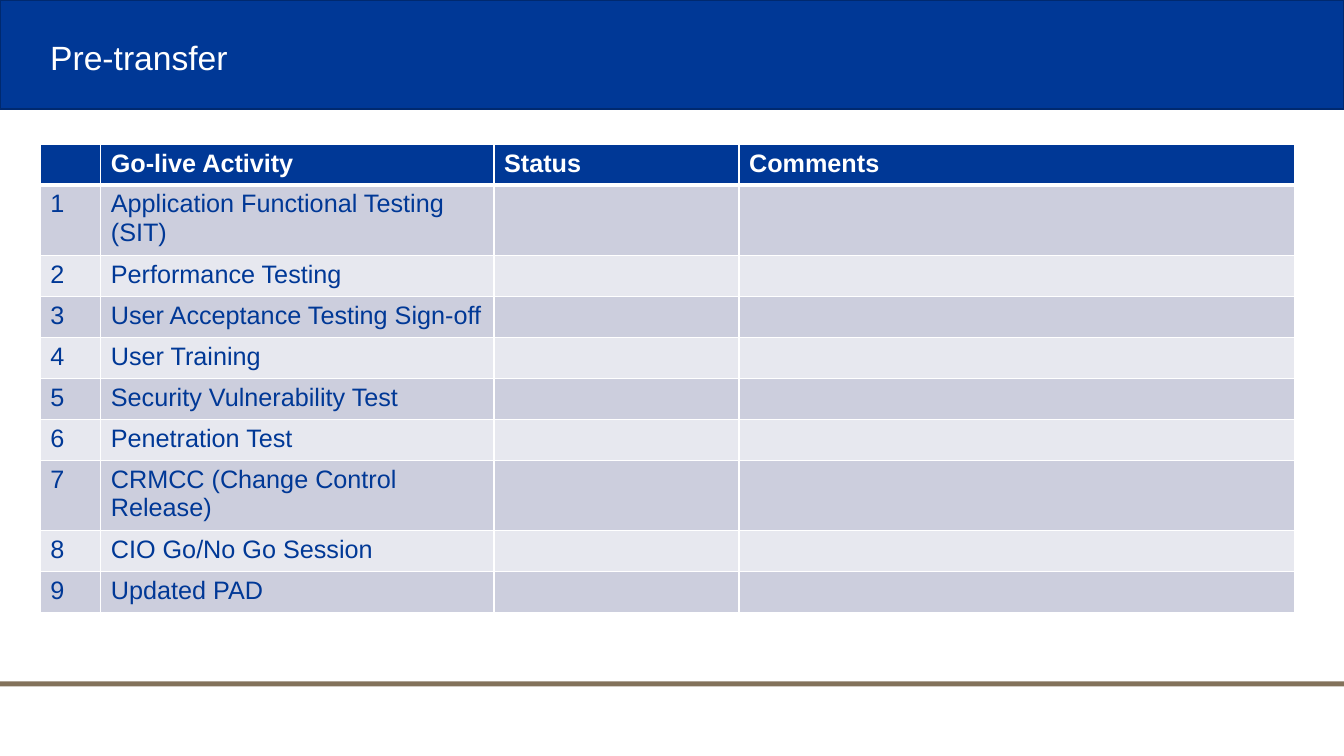
from lxml.etree import SubElement
from pptx import Presentation
from pptx.dml.color import RGBColor as RGB
from pptx.enum.shapes import MSO_SHAPE as SHAPE
from pptx.enum.text import MSO_ANCHOR as ANCHOR
from pptx.oxml.ns import qn
from pptx.util import Inches, Pt

COLORS = {
    "blue": "003896",
    "edge": "00296F",
    "brown": "83725B",
    "white": "FFFFFF",
    "odd": "CCCEDD",
    "even": "E7E8EF",
}
HEADERS = ["", "Go-live Activity", "Status", "Comments"]
ACTIVITIES = [
    "Application Functional Testing (SIT)",
    "Performance Testing",
    "User Acceptance Testing Sign-off",
    "User Training",
    "Security Vulnerability Test",
    "Penetration Test",
    "CRMCC (Change Control Release)",
    "CIO Go/No Go Session",
    "Updated PAD",
]
COL_WIDTHS = [0.6, 3.9, 2.43, 5.51]


class Deck:
    font = "Arial"

    def __init__(self, prs):
        self.slide = prs.slides.add_slide(prs.slide_layouts[6])

    def color(self, name):
        return RGB.from_string(COLORS[name])

    def add_text(self, p, text, color, size, bold=False):
        r = p.add_run()
        r.text = text
        style = {"name": self.font, "size": Pt(size), "bold": bold}
        for key, value in style.items():
            setattr(r.font, key, value)
        r.font.color.rgb = self.color(color)

    def bar(self, x, y, w, h, fill, line=None):
        sp = self.slide.shapes.add_shape(SHAPE.RECTANGLE, *map(Inches, (x, y, w, h)))
        sp.shadow.inherit = False
        sp.fill.solid()
        sp.fill.fore_color.rgb = self.color(fill)
        if line:
            sp.line.color.rgb = self.color(line)
            sp.line.width = Pt(1)
        else:
            sp.line.fill.background()

    def title(self, x, y, w, h, text):
        tf = self.slide.shapes.add_textbox(*map(Inches, (x, y, w, h))).text_frame
        for key, value in {"word_wrap": True, "vertical_anchor": ANCHOR.MIDDLE}.items():
            setattr(tf, key, value)
        p = tf.paragraphs[0]
        p.line_spacing = 0.9
        self.add_text(p, text, "white", 24)

    def border(self, cell, side, width):
        ln = SubElement(cell._tc.get_or_add_tcPr(), qn(f"a:ln{side}"), w=str(Pt(width)))
        fill = SubElement(ln, qn("a:solidFill"))
        SubElement(fill, qn("a:srgbClr"), val=COLORS["white"])

    def cell(self, cell, text, fill, color, bold, top, bottom):
        for side, width in {"L": 1, "R": 1, "T": top, "B": bottom}.items():
            self.border(cell, side, width)
        cell.fill.solid()
        cell.fill.fore_color.rgb = self.color(fill)
        if text:
            self.add_text(cell.text_frame.paragraphs[0], text, color, 18, bold)

    def table(self, x, y, h, widths, rows):
        frame = self.slide.shapes.add_table(
            len(rows), len(widths), *map(Inches, (x, y, sum(widths), h)))
        tbl = frame.table
        for col, width in zip(tbl.columns, widths):
            col.width = Inches(width)
        for i, row in enumerate(rows):
            head = i == 0
            fill = "blue" if head else "odd" if i % 2 else "even"
            color = "white" if head else "blue"
            for j, text in enumerate(row):
                self.cell(tbl.cell(i, j), text, fill, color, head,
                          3 if i == 1 else 1, 3 if head else 1)


def main():
    prs = Presentation()
    prs.slide_width, prs.slide_height = Inches(13.33), Inches(7.5)
    deck = Deck(prs)
    deck.bar(0, 0, 13.33, 1.08, "blue", "edge")
    deck.bar(0, 6.76, 13.33, 0.05, "brown")
    deck.title(0.4, 0.23, 10.4, 0.73, "Pre-transfer")
    rows = [[str(n), name, "", ""] for n, name in enumerate(ACTIVITIES, 1)]
    deck.table(0.4, 1.43, 4.06, COL_WIDTHS, [HEADERS] + rows)
    prs.save("out.pptx")


if __name__ == "__main__":
    main()
